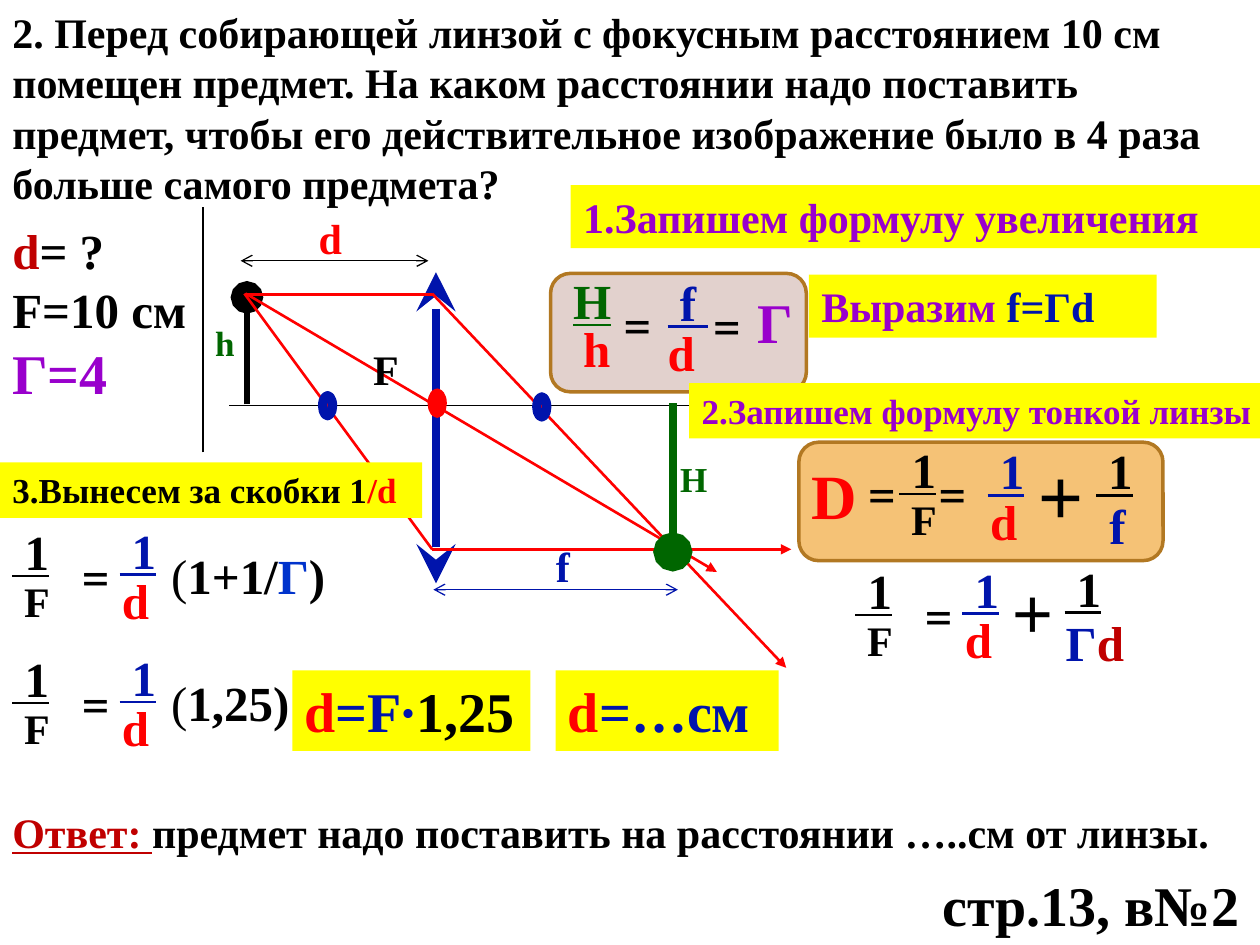
from dataclasses import dataclass

from lxml.etree import SubElement
from pptx import Presentation
from pptx.dml.color import RGBColor
from pptx.enum.shapes import MSO_CONNECTOR, MSO_SHAPE
from pptx.oxml.ns import qn
from pptx.util import Emu, Pt

PX = 9144


@dataclass(frozen=True)
class Theme:
    black: str = "000000"
    red: str = "FF0000"
    crimson: str = "C00000"
    blue: str = "0014AC"
    azure: str = "0033CC"
    green: str = "006600"
    purple: str = "9900CC"
    yellow: str = "FFFF00"
    orange: str = "F0A22E"
    rose: str = "D3B9B3"
    brown: str = "B27822"
    serif: str = "Times New Roman"
    sans: str = "Arial"
    sign: str = "Calibri"
    label: int = 20
    body: int = 24
    math: int = 28
    large: int = 32
    symbol: int = 36
    plus: int = 40
    big_plus: int = 44


T = Theme()


@dataclass(frozen=True)
class Run:
    text: str
    color: str = T.black
    size: int = T.math
    bold: bool = True
    underline: bool = False
    font: str = T.serif


class Board:
    def __init__(self, slide, theme):
        self.s = slide
        self.t = theme

    def text(self, x, y, w, h, *paragraphs, fill=None):
        sp = self.s.shapes.add_textbox(*(Emu(v * PX) for v in (x, y, w, h)))
        if fill:
            sp.fill.solid()
            sp.fill.fore_color.rgb = RGBColor.from_string(fill)
        tf = sp.text_frame
        tf.word_wrap = True
        for i, runs in enumerate(paragraphs):
            p = tf.add_paragraph() if i else tf.paragraphs[0]
            for run in runs:
                r = p.add_run()
                r.text = run.text
                r.font.name = run.font
                r.font.size = Pt(run.size)
                r.font.bold = run.bold
                r.font.underline = run.underline
                r.font.color.rgb = RGBColor.from_string(run.color)

    def note(self, x, y, w, h, *runs):
        self.text(x, y, w, h, runs, fill=self.t.yellow)

    def shape(self, kind, x, y, w, h, fill, line, width, alpha=100):
        sp = self.s.shapes.add_shape(kind, *(Emu(v * PX) for v in (x, y, w, h)))
        sp.shadow.inherit = False
        sp.fill.solid()
        sp.fill.fore_color.rgb = RGBColor.from_string(fill)
        sp.line.color.rgb = RGBColor.from_string(line)
        sp.line.width = Pt(width)
        if alpha < 100:
            clr = sp.fill._xPr.find(qn("a:solidFill"))[0]
            SubElement(clr, qn("a:alpha"), val=str(alpha * 1000))

    def panel(self, x, y, w, h, fill):
        self.shape(MSO_SHAPE.ROUNDED_RECTANGLE, x, y, w, h, fill, self.t.brown, 2, 65)

    def point(self, x, y, line):
        self.shape(MSO_SHAPE.OVAL, x, y, 8, 16, self.t.red, line, 5.25)

    def line(self, x1, y1, x2, y2, color, width, head=None, tail=None):
        cx = self.s.shapes.add_connector(
            MSO_CONNECTOR.STRAIGHT, *(Emu(v * PX) for v in (x1, y1, x2, y2)))
        cx.line.color.rgb = RGBColor.from_string(color)
        cx.line.width = Pt(width)
        ln = cx.line._get_or_add_ln()
        size = "lg" if width > 3 else "med"
        for tag, kind in (("a:headEnd", head), ("a:tailEnd", tail)):
            if kind:
                SubElement(ln, qn(tag), type=kind, w=size, len=size)
        SubElement(cx._element.spPr, qn("a:effectLst"))

    def ray(self, x1, y1, x2, y2, tail=None):
        self.line(x1, y1, x2, y2, self.t.red, 1.5, tail=tail)

    def equals(self, x, y):
        self.text(x, y, 64, 36, [Run("=", size=self.t.large, bold=False, font=self.t.sign)])

    def plus(self, x, y, size):
        self.text(x, y, 64, 63, [Run("+", size=size, bold=False, font=self.t.sans)])

    def fraction(self, x, y, top, bottom, dx, dy):
        self.text(x + dx, y + dy, 74, 55, bottom)
        self.text(x, y, 58, 57, [top])

    def one_over_f(self, x, y):
        self.fraction(x, y, Run(" 1", underline=True),
                      [Run(" F", size=self.t.body)], 1, 43)

    def one_over_d(self, x, y):
        self.fraction(x, y, Run(" 1", self.t.blue, underline=True),
                      [Run("d", self.t.red)], 2, 40)

    def lens_equation(self, x, y):
        self.one_over_f(x, y)
        self.equals(x + 55, y + 16)
        self.one_over_d(x + 85, y - 1)


def draw_panels(b):
    b.panel(634, 351, 289, 94, T.orange)
    b.text(634, 357, 55, 71, [Run("D", T.red, T.symbol)])
    b.equals(679, 359)
    b.one_over_f(704, 344)
    b.equals(735, 359)
    b.one_over_d(774, 345)
    b.plus(814, 350, T.big_plus)
    b.fraction(860, 345, Run(" 1", underline=True), [Run(" f", T.blue)], 1, 43)

    b.panel(437, 217, 203, 94, T.rose)
    b.fraction(445, 210, Run("H ", T.green, underline=True), [Run("h", T.red)], 8, 38)
    b.equals(485, 225)
    b.fraction(520, 211, Run(" f ", T.blue, underline=True), [Run("d", T.red)], 0, 40)
    b.equals(556, 226)
    b.text(591, 223, 39, 64, [Run("Г", T.purple, T.large)])


def draw_lens(b):
    b.line(346, 216, 346, 463, T.blue, 4.5, "stealth", "stealth")
    b.line(182, 322, 596, 322, T.black, 0.75)
    b.line(196, 321, 196, 236, T.black, 3.75, tail="oval")
    b.ray(343, 233, 624, 530, "triangle")
    b.ray(195, 233, 569, 454, "triangle")
    b.ray(343, 436, 628, 436, "triangle")
    b.ray(194, 233, 343, 436)
    b.line(191, 207, 340, 207, T.black, 0.75, "arrow", "arrow")
    b.line(344, 468, 538, 468, T.blue, 0.75, "arrow", "arrow")
    b.ray(195, 234, 343, 234)
    b.line(534, 320, 534, 438, T.green, 4.5, tail="oval")
    b.point(256, 314, T.blue)
    b.point(426, 315, T.blue)
    b.point(343, 312, T.red)
    for x, y, label, color, size in (
        (243, 164, "d", T.red, T.body),
        (423, 424, " f", T.blue, T.body),
        (530, 358, "H", T.green, T.label),
        (161, 250, "h", T.green, T.label),
        (278, 268, " F", T.black, T.body),
    ):
        b.text(x, y, 55, 50, [Run(label, color, size)])


def draw_solution(b):
    b.text(0, 170, 177, 212,
           [Run("d", T.crimson), Run("= ?")],
           [Run("F=10 см")],
           [Run("Г=4", T.purple, T.large)])
    b.line(161, 359, 161, 164, T.black, 1.5)

    b.lens_equation(669, 440)
    b.plus(794, 446, T.plus)
    b.fraction(835, 438, Run(" 1", underline=True),
               [Run("Г", T.blue), Run("d", T.crimson)], 1, 43)

    b.note(547, 304, 488, 44, Run("2.Запишем формулу тонкой линзы", T.purple, T.label))
    b.note(642, 218, 276, 50,
           Run("Выразим ", T.purple, T.body), Run("f=Гd", T.blue, T.body))
    b.note(453, 147, 547, 50, Run("1.Запишем формулу увеличения", T.purple, T.body))
    b.note(0, 367, 335, 44,
           Run("3.Вынесем за скобки 1", size=T.label), Run("/d", T.red, T.label))

    for y, factor in (
        (409, [Run("1+1/"), Run("Г", T.azure), Run(")")]),
        (510, [Run("1,25)")]),
    ):
        b.lens_equation(0, y)
        b.text(126, y + 19, 155, 63, [Run("(", bold=False), *factor])

    b.note(232, 532, 189, 64, Run("d", T.red, T.large),
           Run("=F∙", T.blue, T.large), Run("1,25", size=T.large))
    b.note(441, 532, 177, 64, Run("d", T.red, T.large), Run("=…cм", T.blue, T.large))
    b.text(0, 635, 1000, 50,
           [Run("Ответ: ", T.crimson, T.body, underline=True),
            Run("предмет надо поставить на расстоянии …..см от линзы.", size=T.body)])
    b.text(727, 686, 273, 64,
           [Run(" ", T.red, T.large), Run("стр.13, в№2", size=T.large)])


def main():
    prs = Presentation()
    prs.slide_width, prs.slide_height = Emu(1000 * PX), Emu(750 * PX)
    b = Board(prs.slides.add_slide(prs.slide_layouts[6]), T)
    b.text(0, 0, 1000, 172, [Run(
        "2. Перед собирающей линзой с фокусным расстоянием 10 см помещен предмет. "
        "На каком расстоянии надо поставить предмет, чтобы его действительное "
        "изображение было в 4 раза больше самого предмета?", size=T.body)])
    draw_panels(b)
    draw_lens(b)
    draw_solution(b)
    prs.save("out.pptx")


if __name__ == "__main__":
    main()
